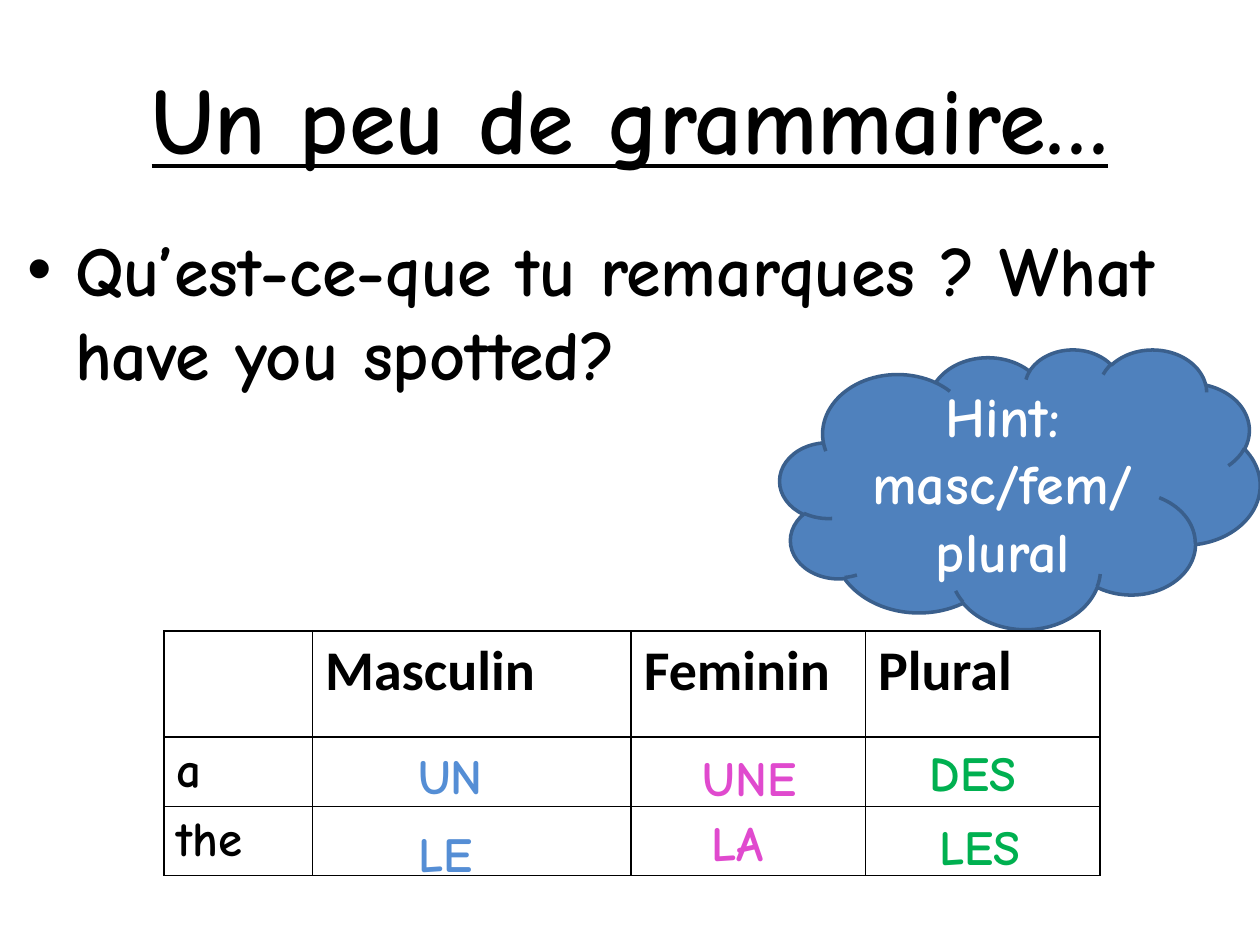
from lxml.etree import SubElement
from pptx import Presentation
from pptx.dml.color import RGBColor
from pptx.enum.shapes import MSO_SHAPE as Shape
from pptx.enum.text import MSO_ANCHOR as Anchor, PP_ALIGN as Align
from pptx.oxml.ns import qn
from pptx.util import Inches, Pt

BLACK = RGBColor(0x00, 0x00, 0x00)
WHITE = RGBColor(0xFF, 0xFF, 0xFF)
CLOUD_FILL = RGBColor(0x4F, 0x81, 0xBD)
CLOUD_LINE = RGBColor(0x3A, 0x5F, 0x8C)
BLUE = RGBColor(0x55, 0x8E, 0xD5)
PINK = RGBColor(0xE0, 0x4A, 0xCE)
GREEN = RGBColor(0x00, 0xB0, 0x50)
HAND, PLAIN = "Comic Neue", "Calibri"

TITLE = "Un peu de grammaire…"
QUESTION = "Qu’est-ce-que tu remarques ? What have you spotted?"
HINT = "Hint: masc/fem/plural"
GRID = [
    ["", "Masculin", "Feminin", "Plural"],
    ["a", "", "", ""],
    ["the", "", "", ""],
]
COLUMNS = [1.18, 2.53, 1.86, 1.86]
ROWS = [0.84, 0.55, 0.55]
ANSWERS = [
    ("UN", BLUE, 3.22, 5.87, 1.5),
    ("UNE", PINK, 5.48, 5.88, 1.1),
    ("DES", GREEN, 7.28, 5.84, 1.11),
    ("LE", BLUE, 3.22, 6.49, 1.18),
    ("LA", PINK, 5.55, 6.4, 1.1),
    ("LES", GREEN, 7.36, 6.43, 1.11),
]


def write(text_frame, text, size, color, font_name=HAND, align=None):
    """Fill a text frame with one bold paragraph."""
    text_frame.text = text
    text_frame.word_wrap = True
    paragraph = text_frame.paragraphs[0]
    paragraph.alignment = align
    for run in paragraph.runs:
        run.font.size, run.font.bold, run.font.name = Pt(size), True, font_name
        run.font.color.rgb = color
    return paragraph


def place(shape, left, top, width, height):
    """Move and size a placeholder."""
    shape.left, shape.top = Inches(left), Inches(top)
    shape.width, shape.height = Inches(width), Inches(height)


def add_borders(cell):
    """Draw a thin black line on every side of a cell."""
    properties = cell._tc.get_or_add_tcPr()
    for side in ("a:lnL", "a:lnR", "a:lnT", "a:lnB"):
        line = SubElement(properties, qn(side), w=str(Pt(1)))
        fill = SubElement(line, qn("a:solidFill"))
        SubElement(fill, qn("a:srgbClr"), val=str(BLACK))


def add_articles_table(slide):
    """Add the table of articles by gender and number."""
    table = slide.shapes.add_table(
        len(ROWS), len(COLUMNS), Inches(1.3), Inches(5.01),
        Inches(sum(COLUMNS)), Inches(sum(ROWS))).table
    for column, width in zip(table.columns, COLUMNS):
        column.width = Inches(width)
    for index, (row, height) in enumerate(zip(table.rows, ROWS)):
        row.height = Inches(height)
        size, font_name = (28, HAND) if index else (32, PLAIN)
        for cell, text in zip(row.cells, GRID[index]):
            add_borders(cell)
            cell.fill.background()
            write(cell.text_frame, text, size, BLACK, font_name)


def main():
    """Build the grammar slide."""
    presentation = Presentation()
    presentation.slide_width, presentation.slide_height = Inches(10), Inches(7.5)
    slide = presentation.slides.add_slide(presentation.slide_layouts[1])

    title, body = slide.placeholders
    place(title, 0.5, 0.3, 9, 1.25)
    heading = write(title.text_frame, TITLE, 54, BLACK, align=Align.CENTER)
    heading.runs[0].font.underline = True
    place(body, 0.12, 1.75, 9.76, 4.95)
    write(body.text_frame, QUESTION, 40, BLACK)

    cloud = slide.shapes.add_shape(
        Shape.CLOUD, Inches(6.19), Inches(2.77), Inches(3.81), Inches(2.22))
    cloud.shadow.inherit = False
    cloud.fill.solid()
    cloud.fill.fore_color.rgb = CLOUD_FILL
    cloud.line.color.rgb = CLOUD_LINE
    cloud.line.width = Pt(2)
    cloud.text_frame.vertical_anchor = Anchor.MIDDLE
    write(cloud.text_frame, HINT, 32, WHITE, align=Align.CENTER)

    add_articles_table(slide)
    for text, color, left, top, width in ANSWERS:
        box = slide.shapes.add_textbox(
            Inches(left), Inches(top), Inches(width), Inches(0.57))
        write(box.text_frame, text, 28, color)

    presentation.save("out.pptx")


if __name__ == "__main__":
    main()
